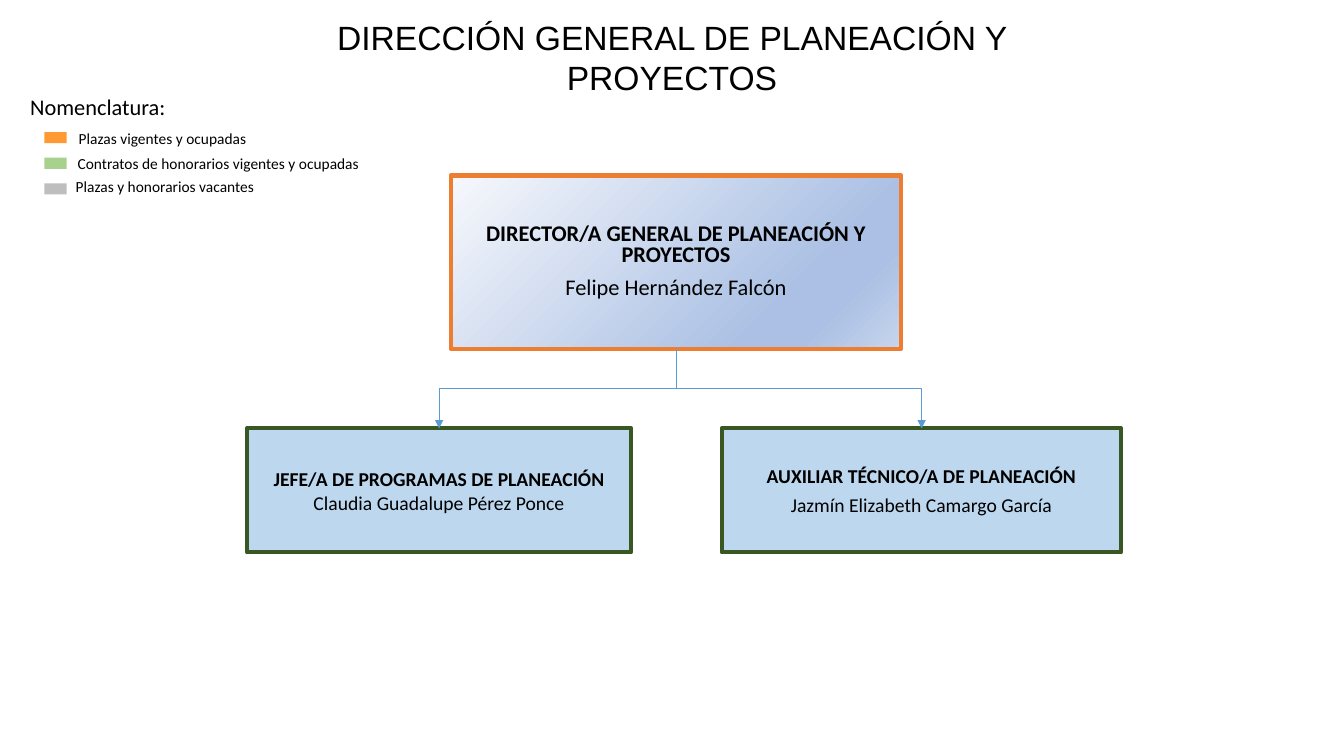
from dataclasses import dataclass

from lxml import etree
from pptx import Presentation
from pptx.dml.color import RGBColor
from pptx.enum.shapes import MSO_CONNECTOR, MSO_SHAPE
from pptx.enum.text import MSO_ANCHOR, MSO_AUTO_SIZE, PP_ALIGN
from pptx.oxml.ns import qn
from pptx.util import Inches, Pt

RECTANGLE = MSO_SHAPE.RECTANGLE
ELBOW = MSO_CONNECTOR.ELBOW
MIDDLE = MSO_ANCHOR.MIDDLE
GROW = MSO_AUTO_SIZE.SHAPE_TO_FIT_TEXT
CENTER, LEFT = PP_ALIGN.CENTER, PP_ALIGN.LEFT
BOTTOM_SITE, TOP_SITE = 2, 0


@dataclass(frozen=True)
class Theme:
    body_font: str = "Calibri"
    title_font: str = "Arial"
    title_size: float = 24
    director_size: float = 16
    staff_size: float = 14
    heading_size: float = 16
    legend_size: float = 11
    text: str = "000000"
    director_line: str = "ED7D31"
    director_stops: tuple = ((0, "F6F8FC"), (74, "ABC0E4"), (83, "ABC0E4"), (100, "C7D5ED"))
    staff_fill: str = "BDD7EE"
    staff_line: str = "385723"
    link: str = "5B9BD5"
    occupied: str = "FF9933"
    contract: str = "A9D18E"
    vacant: str = "BEBEBE"


THEME = Theme()


@dataclass(frozen=True)
class Line:
    text: str
    bold: bool = False
    before: float = 0
    spacing: float | None = None


@dataclass(frozen=True)
class Post:
    left: float
    top: float
    width: float
    height: float
    border: str
    size: float
    lines: tuple[Line, ...]

    @property
    def center(self) -> float:
        return self.left + self.width / 2

    @property
    def bottom(self) -> float:
        return self.top + self.height


@dataclass(frozen=True)
class LegendEntry:
    color: str
    text: str
    left: float
    top: float
    width: float


DIRECTOR = Post(4.47, 1.74, 4.47, 1.72, THEME.director_line, THEME.director_size, (
    Line("DIRECTOR/A GENERAL DE PLANEACIÓN Y PROYECTOS", True, 3, 15.1),
    Line("Felipe Hernández Falcón", before=4)))
STAFF = (
    Post(7.16, 4.25, 3.96, 1.23, THEME.staff_line, THEME.staff_size, (
        Line("AUXILIAR TÉCNICO/A DE PLANEACIÓN", True, 4.2),
        Line("Jazmín Elizabeth Camargo García", before=4.2))),
    Post(2.45, 4.25, 3.81, 1.23, THEME.staff_line, THEME.staff_size, (
        Line("JEFE/A DE PROGRAMAS DE PLANEACIÓN", True, 4.2),
        Line("Claudia Guadalupe Pérez Ponce", before=0.8, spacing=16.6))),
)
LEGEND = (
    LegendEntry(THEME.occupied, "Plazas vigentes y ocupadas", 0.77, 1.27, 1.72),
    LegendEntry(THEME.contract, "Contratos de honorarios vigentes y ocupadas", 0.76, 1.52, 2.87),
    LegendEntry(THEME.vacant, "Plazas y honorarios vacantes", 0.74, 1.75, 2.65),
)
SWATCH_LEFT, SWATCH_TOP, SWATCH_STEP = 0.44, 1.31, 0.255


def rgb(color: str) -> RGBColor:
    return RGBColor.from_string(color)


def write_lines(frame, lines: tuple[Line, ...], size: float, font: str, align) -> None:
    frame.word_wrap = True
    frame.text = "\n".join(line.text for line in lines)
    for paragraph, line in zip(frame.paragraphs, lines):
        paragraph.alignment = align
        paragraph.space_before = Pt(line.before)
        if line.spacing:
            paragraph.line_spacing = Pt(line.spacing)
        for run in paragraph.runs:
            run.font.name, run.font.size, run.font.bold = font, Pt(size), line.bold
            run.font.color.rgb = rgb(THEME.text)


def add_rectangle(shapes, left: float, top: float, width: float, height: float):
    rectangle = shapes.add_shape(RECTANGLE, *map(Inches, (left, top, width, height)))
    rectangle.shadow.inherit = False
    return rectangle


def add_post(shapes, post: Post):
    box = add_rectangle(shapes, post.left, post.top, post.width, post.height)
    box.fill.solid()
    box.fill.fore_color.rgb = rgb(THEME.staff_fill)
    box.line.color.rgb = rgb(post.border)
    box.line.width = Pt(3)
    box.text_frame.vertical_anchor = MIDDLE
    write_lines(box.text_frame, post.lines, post.size, THEME.body_font, CENTER)
    return box


def shade_diagonally(box, stops: tuple) -> None:
    box.fill.gradient()
    box.fill.gradient_angle = 315
    stop_list = next(box.element.iter(qn("a:gsLst")))
    for old_stop in list(stop_list):
        stop_list.remove(old_stop)
    for percent, color in stops:
        stop = etree.SubElement(stop_list, qn("a:gs"), pos=str(percent * 1000))
        etree.SubElement(stop, qn("a:srgbClr"), val=color)


def add_link(shapes, boss: Post, boss_box, report: Post, report_box) -> None:
    """Draw an arrow that goes down, across and down again."""
    link = shapes.add_connector(ELBOW, 0, 0, 0, 0)
    link.begin_connect(boss_box, BOTTOM_SITE)
    link.end_connect(report_box, TOP_SITE)
    drop, span = report.top - boss.bottom, abs(report.center - boss.center)
    # The elbow is turned a quarter, so its width is the drop and its height the span.
    link.left = Inches((boss.center + report.center - drop) / 2)
    link.top = Inches((boss.bottom + report.top - span) / 2)
    link.width, link.height = Inches(drop), Inches(span)
    to_right = report.center > boss.center
    frame = next(link.element.iter(qn("a:xfrm")))
    frame.set("rot", str((270 if to_right else 90) * 60000))
    frame.set("flipH", "1" if to_right else "0")
    frame.set("flipV", "0")
    link.line.color.rgb = rgb(THEME.link)
    link.line.width = Pt(0.5)
    etree.SubElement(next(link.element.iter(qn("a:ln"))), qn("a:tailEnd"), type="triangle")
    etree.SubElement(next(link.element.iter(qn("p:spPr"))), qn("a:effectLst"))


def add_label(shapes, text: str, left: float, top: float, width: float, height: float,
              size: float) -> None:
    frame = shapes.add_textbox(*map(Inches, (left, top, width, height))).text_frame
    frame.margin_left = frame.margin_right = frame.margin_bottom = 0
    frame.margin_top = Inches(0.01)
    frame.auto_size = GROW
    write_lines(frame, (Line(text, before=1.1),), size, THEME.body_font, LEFT)


def add_legend(shapes) -> None:
    add_label(shapes, "Nomenclatura:", 0.3, 0.91, 1.74, 0.28, THEME.heading_size)
    for row, entry in enumerate(LEGEND):
        swatch = add_rectangle(shapes, SWATCH_LEFT, SWATCH_TOP + row * SWATCH_STEP, 0.22, 0.11)
        swatch.fill.solid()
        swatch.fill.fore_color.rgb = rgb(entry.color)
        swatch.line.fill.background()
        add_label(shapes, entry.text, entry.left + 0.01, entry.top, entry.width, 0.2,
                  THEME.legend_size)


def main() -> None:
    deck = Presentation()
    deck.slide_width, deck.slide_height = Inches(13.33), Inches(7.5)
    shapes = deck.slides.add_slide(deck.slide_layouts[6]).shapes

    director_box = add_post(shapes, DIRECTOR)
    shade_diagonally(director_box, THEME.director_stops)
    staff_boxes = [add_post(shapes, post) for post in STAFF]

    title = shapes.add_textbox(*map(Inches, (2.45, 0.12, 8.43, 0.5))).text_frame
    title.auto_size = GROW
    write_lines(title, (Line("DIRECCIÓN GENERAL DE PLANEACIÓN Y PROYECTOS"),),
                THEME.title_size, THEME.title_font, CENTER)

    for post, box in zip(STAFF, staff_boxes):
        add_link(shapes, DIRECTOR, director_box, post, box)
    add_legend(shapes.add_group_shape().shapes)
    deck.save("out.pptx")


if __name__ == "__main__":
    main()
